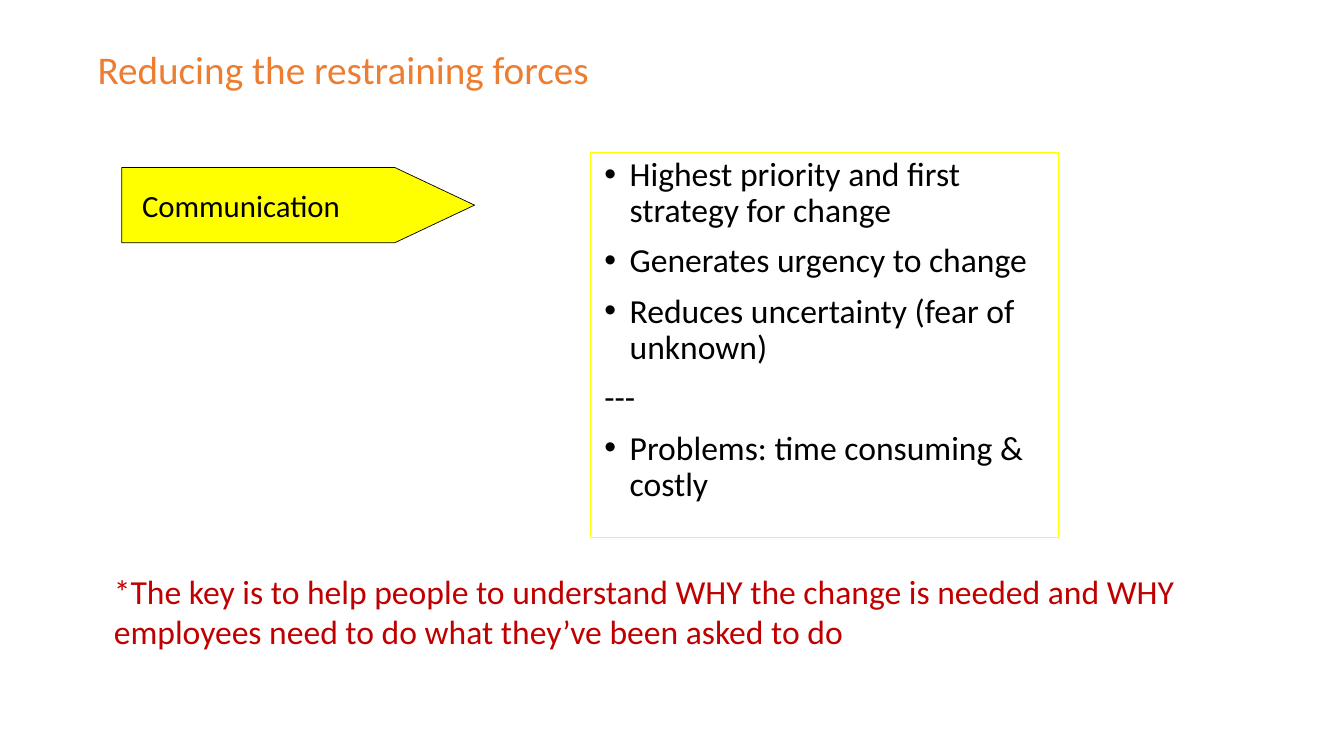
"""Builds the slide on communication as a way to reduce restraining forces."""
from dataclasses import dataclass

from lxml import etree
from pptx import Presentation
from pptx import util as u
from pptx.dml.color import RGBColor
from pptx.enum import shapes, text
from pptx.oxml import ns


@dataclass(frozen=True)
class Theme:
    font: str = "Calibri"
    orange: RGBColor = RGBColor(0xED, 0x7D, 0x31)
    yellow: RGBColor = RGBColor(0xFF, 0xFF, 0x00)
    black: RGBColor = RGBColor(0x00, 0x00, 0x00)
    red: RGBColor = RGBColor(0xC0, 0x00, 0x00)
    title_size: int = 28
    label_size: int = 22
    body_size: int = 24


theme = Theme()


def write(shape, lines, size, color, anchor=text.MSO_ANCHOR.TOP, spacing=None, before=None):
    """Write one paragraph per line in the given format and return the paragraphs."""
    frame = shape.text_frame
    frame.word_wrap = True
    frame.vertical_anchor = anchor
    frame.text = "\n".join(lines)
    for paragraph in frame.paragraphs:
        paragraph.alignment = text.PP_ALIGN.LEFT
        paragraph.line_spacing = spacing
        paragraph.space_before = before
        font = paragraph.runs[0].font
        font.name, font.size, font.color.rgb = theme.font, u.Pt(size), color
    return frame.paragraphs


presentation = Presentation()
presentation.slide_width, presentation.slide_height = u.Cm(33.87), u.Cm(19.05)
slide = presentation.slides.add_slide(presentation.slide_layouts[6])

title = slide.shapes.add_textbox(u.Cm(2.21), u.Cm(0.51), u.Cm(21.46), u.Cm(2.59))
write(title, ["Reducing the restraining forces"], theme.title_size, theme.orange,
      anchor=text.MSO_ANCHOR.MIDDLE, spacing=0.9)

separator = "---"
points = [
    "Highest priority and first strategy for change",
    "Generates urgency to change",
    "Reduces uncertainty (fear of unknown)",
    separator,
    "Problems: time consuming & costly",
]
points_box = slide.shapes.add_textbox(u.Cm(14.88), u.Cm(3.84), u.Cm(11.79), u.Cm(9.7))
points_box.line.color.rgb = theme.yellow
points_box.line.width = u.Pt(0.75)
for paragraph in write(points_box, points, theme.body_size, theme.black,
                       spacing=0.9, before=u.Pt(10)):
    bulleted = paragraph.text != separator
    properties = paragraph._p.get_or_add_pPr()
    properties.set("marL", str(u.Cm(0.74 if bulleted else 0.1)))
    properties.set("indent", str(u.Cm(-0.64 if bulleted else 0)))
    if bulleted:
        etree.SubElement(properties, ns.qn("a:buFont"), typeface="Arial")
        etree.SubElement(properties, ns.qn("a:buChar"), char="•")

arrow = slide.shapes.add_shape(shapes.MSO_SHAPE.PENTAGON,
                               u.Cm(3.07), u.Cm(4.22), u.Cm(8.89), u.Cm(1.9))
arrow.adjustments[0] = 1.06
arrow.shadow.inherit = False
arrow.fill.solid()
arrow.fill.fore_color.rgb = theme.yellow
arrow.line.color.rgb = theme.black
arrow.line.width = u.Pt(0.5)
arrow.text_frame.margin_left = u.Cm(0.51)
write(arrow, ["Communication"], theme.label_size, theme.black, anchor=text.MSO_ANCHOR.MIDDLE)

note = slide.shapes.add_textbox(u.Cm(2.62), u.Cm(14.25), u.Cm(30.18), u.Cm(2.31))
write(note, ["*The key is to help people to understand WHY the change is needed and WHY "
             "employees need to do what they’ve been asked to do"],
      theme.body_size, theme.red)
note.text_frame.auto_size = text.MSO_AUTO_SIZE.SHAPE_TO_FIT_TEXT

presentation.save("out.pptx")
